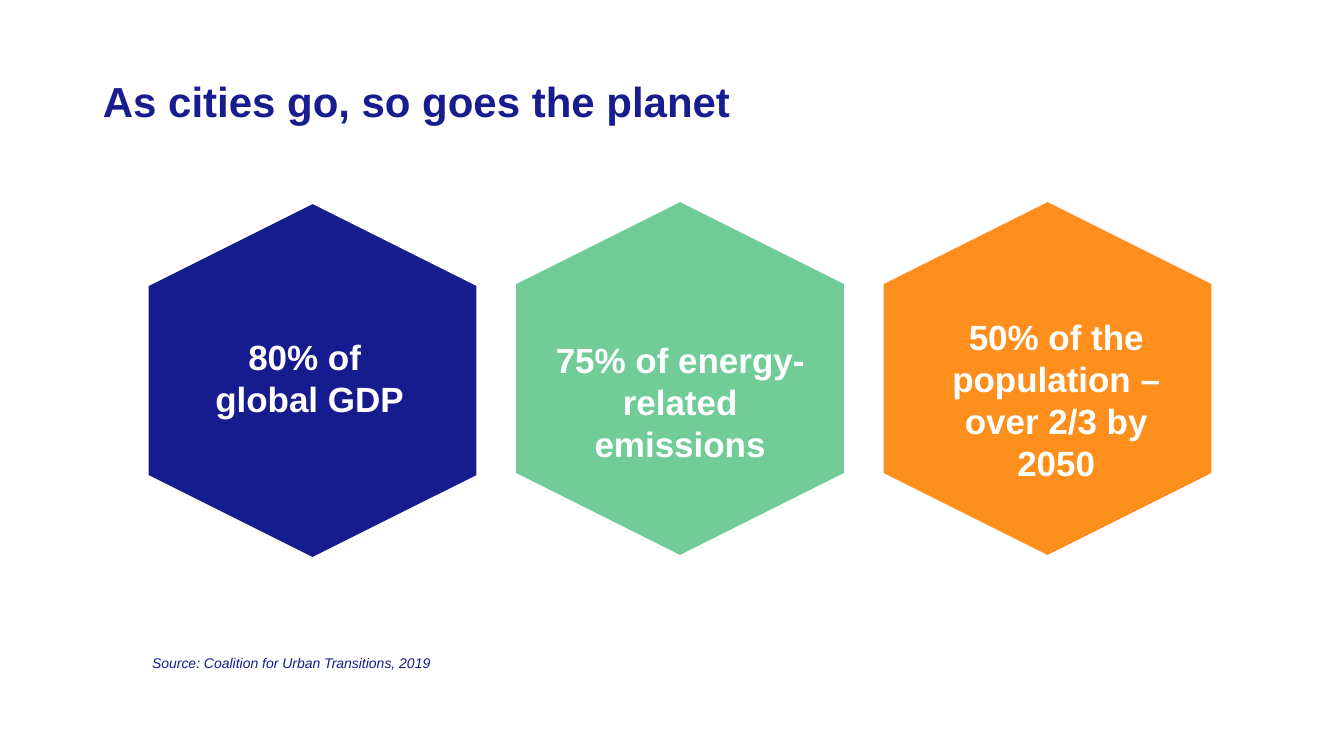
from dataclasses import dataclass

from pptx import Presentation
from pptx.dml.color import RGBColor
from pptx.enum.shapes import MSO_SHAPE
from pptx.enum.text import MSO_ANCHOR, MSO_AUTO_SIZE, PP_ALIGN
from pptx.util import Inches, Pt

HEXAGON = MSO_SHAPE.HEXAGON
TOP = MSO_ANCHOR.TOP
GROW, FIXED = MSO_AUTO_SIZE.SHAPE_TO_FIT_TEXT, MSO_AUTO_SIZE.NONE
LEFT, CENTER = PP_ALIGN.LEFT, PP_ALIGN.CENTER
TITLE_ONLY = 5


@dataclass(frozen=True)
class Theme:
    """Colours, font and type sizes of the slide."""
    font: str = "Arial"
    title: str = "171C8F"
    navy: str = "161C8E"
    green: str = "71CC98"
    orange: str = "FF8F1C"
    white: str = "FFFFFF"
    title_size: int = 30
    fact_size: int = 25
    source_size: int = 10


THEME = Theme()


def write(tf, lines, size, color, bold=False, italic=False, align=LEFT, spacing=1.0):
    """Fill a text frame with one formatted paragraph per line."""
    tf.word_wrap = True
    tf.vertical_anchor = TOP
    for i, line in enumerate(lines):
        p = tf.paragraphs[0] if i == 0 else tf.add_paragraph()
        p.alignment = align
        p.line_spacing = spacing
        r = p.add_run()
        r.text = line
        r.font.name = THEME.font
        r.font.size = Pt(size)
        r.font.bold = bold
        r.font.italic = italic
        r.font.color.rgb = RGBColor.from_string(color)


def add_title(s, text, x, y, w, h):
    """Place and format the title placeholder."""
    sp = s.shapes.title
    sp.left, sp.top, sp.width, sp.height = (Inches(v) for v in (x, y, w, h))
    write(sp.text_frame, [text], THEME.title_size, THEME.title, bold=True, spacing=0.9)
    sp.text_frame.auto_size = FIXED


def add_text(s, lines, x, y, w, h, **fmt):
    """Add a text box that grows with its text."""
    sp = s.shapes.add_textbox(Inches(x), Inches(y), Inches(w), Inches(h))
    write(sp.text_frame, lines, **fmt)
    sp.text_frame.auto_size = GROW


def add_hexagon(s, x, y, color):
    """Add a borderless hexagon standing on its point."""
    sp = s.shapes.add_shape(HEXAGON, Inches(x), Inches(y), Inches(3.5), Inches(3.25))
    sp.rotation = 270
    sp.shadow.inherit = False
    sp.fill.solid()
    sp.fill.fore_color.rgb = RGBColor.from_string(color)
    sp.line.fill.background()


def main():
    """Build the slide and save it."""
    prs = Presentation()
    prs.slide_width, prs.slide_height = Inches(13.33), Inches(7.5)
    s = prs.slides.add_slide(prs.slide_layouts[TITLE_ONLY])
    add_title(s, "As cities go, so goes the planet", 0.92, 0.76, 10.32, 1.45)
    add_text(s, ["Source: Coalition for Urban Transitions, 2019"], 1.41, 6.44, 5.34, 0.27,
             size=THEME.source_size, color=THEME.navy, italic=True)

    facts = [
        (THEME.navy, 2.15, ["80% of ", "global GDP"], (1.95, 3.28, 2.24, 0.94)),
        (THEME.green, 2.13, ["75% of energy-related emissions"], (5.37, 3.31, 2.75, 1.36)),
        (THEME.orange, 2.13, ["50% of the population – over 2/3 by 2050"],
         (9.1, 3.08, 2.75, 1.36)),
    ]
    for i, (color, top, lines, box) in enumerate(facts):
        add_hexagon(s, 1.35 + 3.645 * i, top, color)
        add_text(s, lines, *box, size=THEME.fact_size, color=THEME.white,
                 bold=True, align=CENTER)
    prs.save("out.pptx")


if __name__ == "__main__":
    main()
